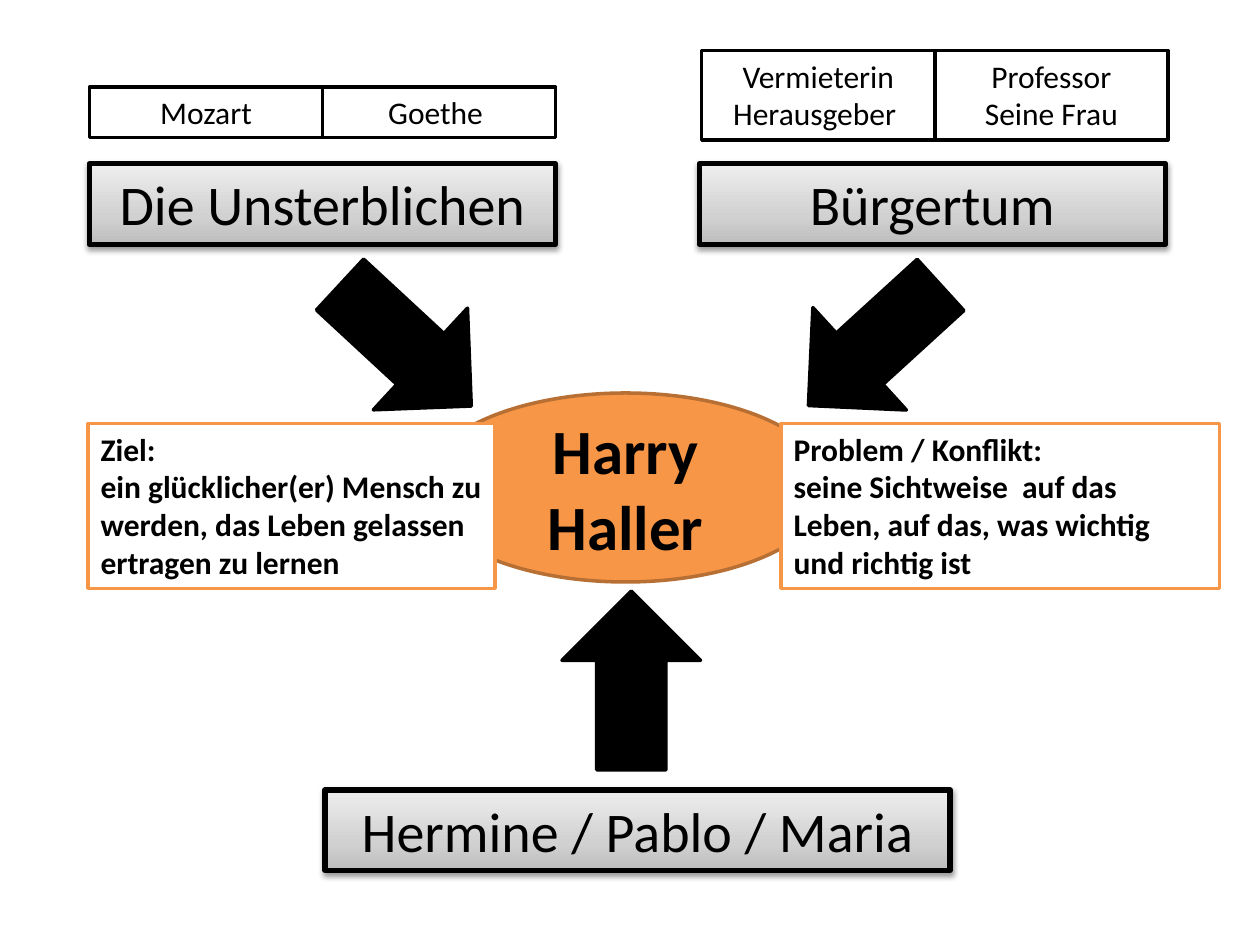
from lxml.etree import SubElement
from pptx import Presentation
from pptx.dml.color import RGBColor
from pptx.enum.shapes import MSO_SHAPE
from pptx.enum.text import MSO_ANCHOR, PP_ALIGN
from pptx.oxml.ns import qn
from pptx.util import Pt

# Content: positions are left, top, width, height in points
CENTER = ("Harry Haller", (241.2, 224.6, 232.6, 108))
GROUPS = [
    ("Die Unsterblichen", (51.1, 93.6, 266.4, 46.1)),
    ("Bürgertum", (399.6, 93.6, 266.4, 46.1)),
    ("Hermine / Pablo / Maria", (185.8, 451.4, 357.1, 46.1)),
]
# Rows of members: left, top, height, then one text for each box
MEMBER_WIDTH = 133.2
MEMBERS = [
    (51.1, 49.7, 28.8, ["Mozart", "Goethe "]),
    (401, 28.8, 51.1, ["Vermieterin\nHerausgeber ", "Professor\nSeine Frau"]),
]
ARROW_SIZE = (79.2, 102.2)
ARROWS = [(192.2, 146.2, 312.8), (460.1, 146.2, 47.6), (321.1, 337.7, 180)]
NOTES = [
    ("Ziel:\nein glücklicher(er) Mensch zu werden, das Leben gelassen ertragen zu lernen",
     (50.4, 241.9, 232.6, 94.3)),
    ("Problem / Konflikt:\nseine Sichtweise  auf das Leben, auf das, was wichtig und richtig ist",
     (446.4, 241.9, 250.6, 94.3)),
]

# Formats
BLACK, WHITE, ORANGE, BROWN = "000000", "FFFFFF", "F79646", "B76F34"
GRADIENT = [(0, "BDBDBD"), (35, "D1D1D1"), (100, "EEEEEE")]
CENTER_FONT = {"size": Pt(36), "bold": True}
GROUP_FONT = {"size": Pt(32)}
MEMBER_FONT = {"size": Pt(18)}
NOTE_FONT = {"size": Pt(18), "bold": True}


def color(hex_value):
    return RGBColor.from_string(hex_value)


def add_box(slide, kind, position, fill, line, line_width=2):
    shape = slide.shapes.add_shape(kind, *[Pt(value) for value in position])
    shape.shadow.inherit = False
    shape.fill.solid()
    shape.fill.fore_color.rgb = color(fill)
    shape.line.color.rgb = color(line)
    shape.line.width = Pt(line_width)
    return shape


def write_text(shape, text, font_format, alignment=PP_ALIGN.CENTER, anchor=MSO_ANCHOR.TOP):
    frame = shape.text_frame
    frame.word_wrap = True
    frame.vertical_anchor = anchor
    frame.text = text
    for paragraph in frame.paragraphs:
        paragraph.alignment = alignment
        for run in paragraph.runs:
            run.font.name = "Calibri"
            run.font.color.rgb = color(BLACK)
            for name, value in font_format.items():
                setattr(run.font, name, value)


def add_color_element(parent, hex_value):
    return SubElement(parent, qn("a:srgbClr"), val=hex_value)


def set_gradient(shape):
    """Give the shape a three-stop gradient, dark at the bottom."""
    shape.fill.gradient()
    gradient = shape._element.spPr.find(qn("a:gradFill"))
    for child in list(gradient):
        gradient.remove(child)
    stops = SubElement(gradient, qn("a:gsLst"))
    for percent, hex_value in GRADIENT:
        stop = SubElement(stops, qn("a:gs"), pos=str(percent * 1000))
        add_color_element(stop, hex_value)
    SubElement(gradient, qn("a:lin"), ang=str(270 * 60000), scaled="0")


def set_shadow(shape):
    """Give the shape a soft shadow straight below."""
    effects = shape._element.spPr.find(qn("a:effectLst"))
    shadow = SubElement(effects, qn("a:outerShdw"), blurRad=str(Pt(3.1)), dist=str(Pt(1.6)),
                        dir=str(90 * 60000), rotWithShape="0")
    SubElement(add_color_element(shadow, BLACK), qn("a:alpha"), val="38000")


def main():
    presentation = Presentation()
    presentation.slide_width, presentation.slide_height = Pt(720), Pt(540)
    slide = presentation.slides.add_slide(presentation.slide_layouts[6])

    # Main figure
    text, position = CENTER
    ellipse = add_box(slide, MSO_SHAPE.OVAL, position, ORANGE, BROWN)
    write_text(ellipse, text, CENTER_FONT, anchor=MSO_ANCHOR.MIDDLE)

    # Groups around the main figure
    for text, position in GROUPS:
        box = add_box(slide, MSO_SHAPE.RECTANGLE, position, WHITE, BLACK, 3)
        set_gradient(box)
        set_shadow(box)
        write_text(box, text, GROUP_FONT)

    # Members above their group
    for left, top, height, texts in MEMBERS:
        for column, text in enumerate(texts):
            position = (left + column * MEMBER_WIDTH, top, MEMBER_WIDTH, height)
            box = add_box(slide, MSO_SHAPE.RECTANGLE, position, WHITE, BLACK)
            write_text(box, text, MEMBER_FONT)

    # Arrows towards the main figure
    for left, top, rotation in ARROWS:
        arrow = add_box(slide, MSO_SHAPE.DOWN_ARROW, (left, top, *ARROW_SIZE), BLACK, BLACK)
        arrow.rotation = rotation

    # Goal and conflict
    for text, position in NOTES:
        box = add_box(slide, MSO_SHAPE.RECTANGLE, position, WHITE, ORANGE)
        write_text(box, text, NOTE_FONT, PP_ALIGN.LEFT)

    presentation.save("out.pptx")


if __name__ == "__main__":
    main()
